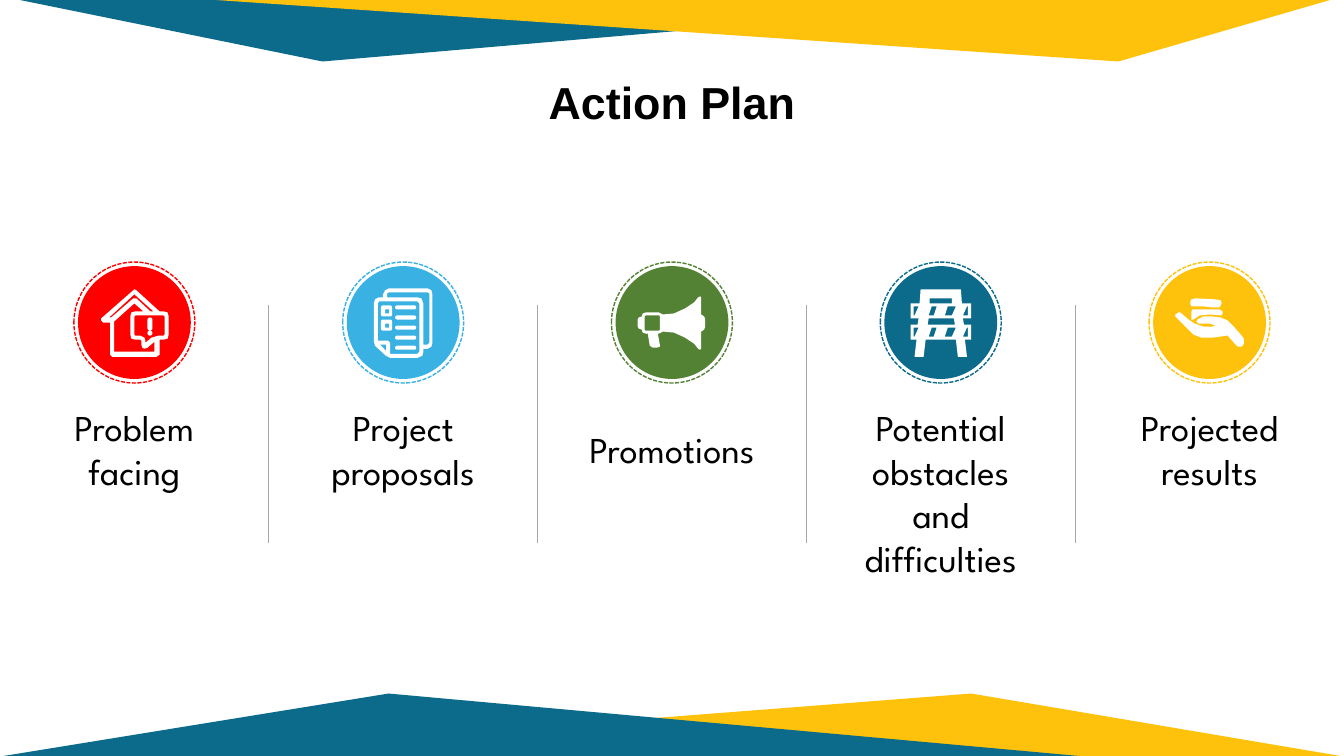
from dataclasses import dataclass
from math import cos, pi, sin

from lxml import etree
from pptx import Presentation
from pptx import util as u
from pptx.dml.color import RGBColor
from pptx.enum import dml, shapes, text
from pptx.oxml.ns import qn

Point = tuple[float, float]
Ring = list[Point]

TEAL, GOLD, WHITE, BLACK, GREY = "0C6B8B", "FFC20C", "FFFFFF", "000000", "A6A6A6"
WIDE, HIGH = 960, 540
PITCH = WIDE / 5
MID = 230.4   # centre line of the badges
STEP = 0.72   # grid step of the icons, in points


@dataclass
class Band:
    left: float
    top: float
    wide: float
    high: float
    peak: float
    turn: int
    color: str


@dataclass
class Stage:
    lines: list[str]
    color: str
    icon: list[Ring]
    top: float = 285.8


def box(left: float, top: float, right: float, low: float, rad: float = 0) -> Ring:
    """Outline of a rectangle with round corners."""
    if not rad:
        return [(left, top), (right, top), (right, low), (left, low)]
    hubs = [(right - rad, low - rad), (left + rad, low - rad),
            (left + rad, top + rad), (right - rad, top + rad)]
    return [(x + rad * cos((i + k / 4) * pi / 2), y + rad * sin((i + k / 4) * pi / 2))
            for i, (x, y) in enumerate(hubs) for k in range(5)]


# Icon outlines, in grid steps from the badge centre
HOUSE = [
    [(0, -33), (2, -32), (25, -11), (29, -11), (33, -10), (34, -6), (34, 12), (33, 16),
     (29, 17), (25, 17), (25, 32), (22, 34), (-22, 34), (-24, 32), (-24, 0), (-31, 0),
     (-33, -2), (-33, -4), (-1, -32)],
    [(0, -28), (-25, -5), (-23, -5), (-1, -24), (2, -24), (16, -11), (19, -11)],
    [(0, -19), (-20, -1), (-20, 29), (20, 29), (20, 19), (13, 25), (10, 26), (8, 25),
     (7, 22), (7, 18), (6, 17), (1, 17), (-3, 16), (-4, 12), (-4, -6), (-3, -10),
     (1, -11), (9, -11)],
    [(1, -7), (0, -6), (0, 12), (1, 13), (6, 13), (10, 15), (11, 18), (11, 20),
     (17, 15), (24, 13), (29, 13), (30, 12), (30, -6), (29, -7)],
    box(13, -5, 18, 8, 2.5),
    box(13, 8, 18, 13, 2.5),
]
PAPER = [
    [(-14, -34), (24, -34), (28, -32), (29, -28), (29, 20), (28, 24), (24, 26), (20, 26),
     (20, 29), (19, 33), (14, 35), (-13, 35), (-17, 33), (-28, 23), (-29, 19), (-29, -19),
     (-28, -23), (-24, -25), (-20, -25), (-20, -28), (-18, -32)],
    [(-14, -30), (-16, -29), (-16, -25), (14, -25), (18, -24), (20, -19), (20, 22),
     (24, 22), (26, 20), (26, -29), (24, -30)],
    [(-24, -21), (-25, -19), (-25, 18), (-15, 18), (-13, 20), (-13, 31), (14, 31),
     (16, 29), (16, -19), (14, -21)],
    [(-23, 22), (-17, 28), (-17, 22)],
    *[box(-8, y, 13, y + 4, 2) for y in range(-17, 24, 10)],
    *[box(-22, y, -11, y + 11, 2) for y in (-17, -3)],
    *[box(-18, y + 4, -14, y + 8) for y in (-17, -3)],
]
HORN = [
    [(29, -8), (29, -25), (28, -26), (26, -25), (22, -20), (13, -14), (2, -9), (-9, -8),
     (-13, -10), (-26, -10), (-29, -9), (-30, -6), (-33, -5), (-34, -3), (-34, 4),
     (-33, 6), (-30, 7), (-29, 10), (-26, 11), (-24, 11), (-22, 23), (-19, 25), (-15, 25),
     (-12, 24), (-12, 22), (-14, 11), (-13, 11), (-9, 9), (2, 10), (13, 15), (22, 21),
     (26, 26), (28, 27), (29, 26), (29, 9), (32, 7), (33, 4), (33, -3), (32, -6)],
    box(-27, -7, -12, 8, 1),
]
HALF = [(20, -33), (21, -19), (30, -19), (30, -4), (22, -4), (23, 2), (30, 2), (30, 17),
        (24, 17), (26, 34), (17, 34), (15, 17)]
STRIPES = [(-27, -22, -26, -27), (-9, -4, -7, -12), (7, 15, 11, 4), (26, 27, 27, 22)]
FENCE = [
    HALF + [(-x, y) for x, y in reversed(HALF)],
    box(-11, -24, 11, -19),
    [(-13, 2), (-12, -4), (13, -4), (14, 2)],
    *[[(a, y), (b, y), (c, y + 9), (d, y + 9)]
      for y in (-16, 5) for a, b, c, d in STRIPES],
]
HAND = [
    [(-31, -10), (-29, -10), (-21, -3), (-15, 1), (-6, 4), (3, 4), (6, 3), (0, 1),
     (-11, 1), (-13, -1), (-12, -3), (-6, -6), (3, -6), (11, -5), (18, -2), (24, 4),
     (31, 12), (34, 16), (34, 21), (32, 24), (28, 24), (25, 21), (18, 13), (17, 13),
     (3, 15), (-8, 15), (-16, 12), (-25, 3), (-34, -6), (-34, -8), (-32, -9)],
    [(-17, -13), (10, -13), (13, -11), (13, -9), (12, -7), (0, -8), (-10, -7), (-16, -3),
     (-18, -3), (-18, -11)],
    [(-14, -24), (6, -23), (11, -22), (12, -19), (10, -15), (3, -15), (-6, -16),
     (-18, -16), (-19, -18), (-19, -21), (-18, -23)],
]

BANDS = [
    Band(0, -2.9, 775.4, 46.8, 0.703, 180, TEAL),
    Band(112, -2.9, 848, 46.8, 0.19, 180, GOLD),
    Band(112, 495.4, 848, 45, 0.686, 0, GOLD),
    Band(0, 495.4, 775.4, 45, 0.358, 0, TEAL),
]
STAGES = [
    Stage(["Problem", "facing"], "FF0000", HOUSE),
    Stage(["Project", "proposals"], "39B1E3", PAPER),
    Stage(["Promotions"], "548235", HORN, 301.6),
    Stage(["Potential", "obstacles", "and", "difficulties"], TEAL, FENCE),
    Stage(["Projected", "results"], GOLD, HAND),
]

deck = Presentation()
deck.slide_width, deck.slide_height = u.Pt(WIDE), u.Pt(HIGH)
page = deck.slides.add_slide(deck.slide_layouts[6]).shapes


def tint(part, color: str) -> None:
    """Give a fill a solid colour."""
    part.solid()
    part.fore_color.rgb = RGBColor.from_string(color)


def paint(shape, color: str) -> None:
    """Plain fill with no line and no shadow."""
    shape.shadow.inherit = False
    tint(shape.fill, color)
    shape.line.fill.background()


def write(lines: list[str], left: float, top: float, wide: float, high: float, *,
          font: str, size: float, bold: bool = False, wrap: bool = False,
          space: float = 1.0) -> None:
    frame = page.add_textbox(*map(u.Pt, (left, top, wide, high))).text_frame
    frame.word_wrap = wrap
    for i, line in enumerate(lines):
        para = frame.paragraphs[0] if i == 0 else frame.add_paragraph()
        para.alignment, para.line_spacing = text.PP_ALIGN.CENTER, space
        run = para.add_run()
        run.text = line
        run.font.name, run.font.size, run.font.bold = font, u.Pt(size), bold
        tint(run.font.fill, BLACK)


def draw_band(band: Band) -> None:
    shape = page.add_shape(shapes.MSO_SHAPE.ISOSCELES_TRIANGLE,
                           *map(u.Pt, (band.left, band.top, band.wide, band.high)))
    shape.adjustments[0] = band.peak
    shape.rotation = band.turn
    paint(shape, band.color)


def draw_disc(mid: float, size: float, color: str, dashed: bool = False) -> None:
    disc = page.add_shape(shapes.MSO_SHAPE.OVAL, u.Pt(mid - size / 2),
                          u.Pt(MID - size / 2), u.Pt(size), u.Pt(size))
    paint(disc, color)
    if dashed:
        disc.fill.background()
        tint(disc.line.fill, color)
        disc.line.width = u.Pt(1)
        disc.line.dash_style = dml.MSO_LINE.SQUARE_DOT


def draw_icon(mid: float, rings: list[Ring]) -> None:
    sized = [[(u.Pt(x * STEP), u.Pt(y * STEP)) for x, y in ring] for ring in rings]
    pen = page.build_freeform(*sized[0][0])
    for i, ring in enumerate(sized):
        if i:
            pen.move_to(*ring[0])
        pen.add_line_segments(ring[1:], close=True)
    paint(pen.convert_to_shape(u.Pt(mid), u.Pt(MID)), WHITE)


def draw_rule(x: float) -> None:
    rule = page.add_connector(shapes.MSO_CONNECTOR.STRAIGHT,
                              *map(u.Pt, (x, 218.2, x, 388.1)))
    tint(rule.line.fill, GREY)
    rule.line.width = u.Pt(0.5)
    etree.SubElement(rule._element.spPr, qn("a:effectLst"))


# Bands and title
for band in BANDS:
    draw_band(band)
write(["Action Plan"], 0, 54, WIDE, 84, font="Arial", size=32, bold=True,
      wrap=True, space=0.9)

# Stages with rules between them
for i, stage in enumerate(STAGES):
    mid = PITCH * (i + 0.5)
    if i:
        draw_rule(PITCH * i)
    draw_disc(mid, 86.4, stage.color, dashed=True)
    draw_disc(mid, 80.6, stage.color)
    draw_icon(mid, stage.icon)
    write(stage.lines, mid - 70, stage.top, 140, 7.2 + 31.5 * len(stage.lines),
          font="League Spartan", size=26)

deck.save("out.pptx")
